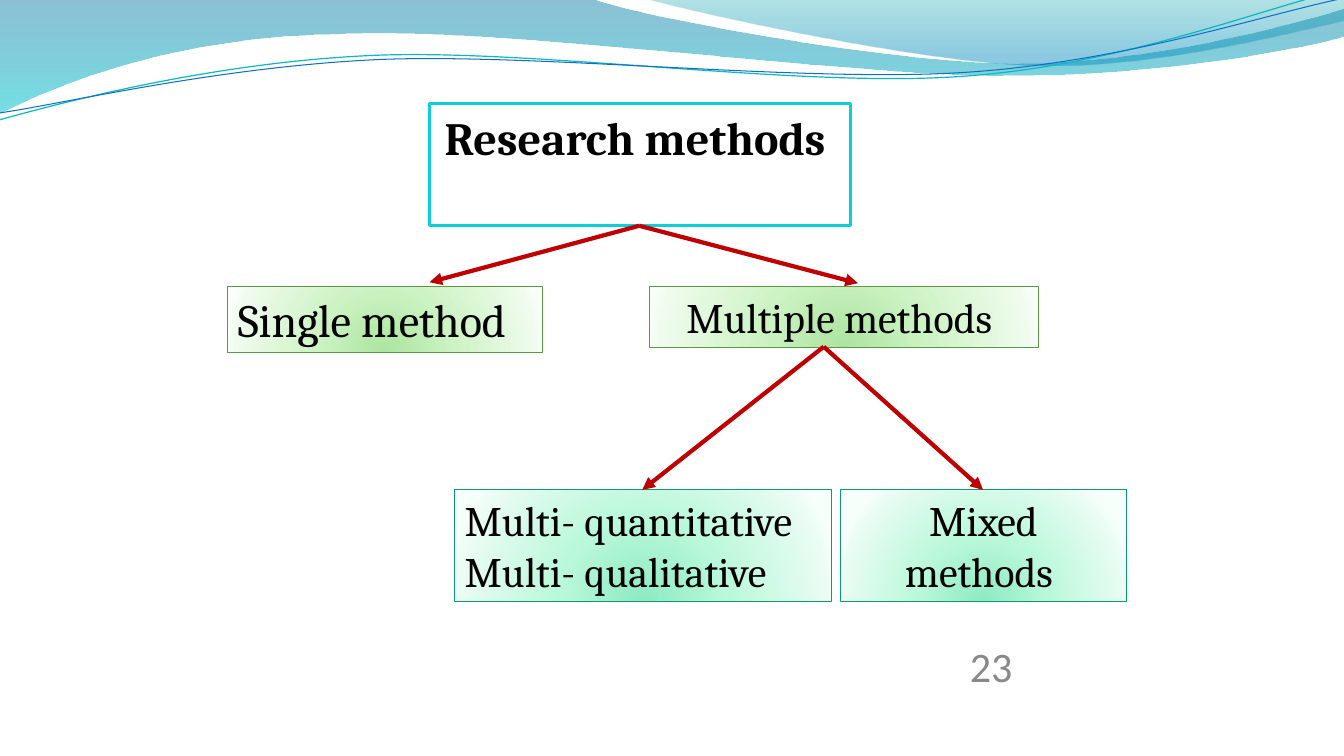
from itertools import chain

from lxml import etree
from pptx import Presentation
from pptx.dml.color import RGBColor
from pptx.enum.shapes import MSO_CONNECTOR, MSO_SHAPE
from pptx.enum.text import MSO_ANCHOR, MSO_AUTO_SIZE, PP_ALIGN
from pptx.oxml import parse_xml
from pptx.oxml.ns import nsdecls, qn
from pptx.util import Inches, Pt

RECTANGLE, STRAIGHT = MSO_SHAPE.RECTANGLE, MSO_CONNECTOR.STRAIGHT
TOP, BOTTOM = MSO_ANCHOR.TOP, MSO_ANCHOR.BOTTOM
LEFT, CENTER = PP_ALIGN.LEFT, PP_ALIGN.CENTER
NO_FIT, GROW = MSO_AUTO_SIZE.NONE, MSO_AUTO_SIZE.SHAPE_TO_FIT_TEXT

BLACK = RGBColor(0x00, 0x00, 0x00)
WHITE = RGBColor(0xFF, 0xFF, 0xFF)
GRAY = RGBColor(0x89, 0x89, 0x89)
CYAN = RGBColor(0x0B, 0xD0, 0xD9)
RED = RGBColor(0xC0, 0x00, 0x00)
GREEN_LINE = RGBColor(0x5B, 0x97, 0x47)
MINT_LINE = RGBColor(0x0A, 0x9B, 0x74)
TEAL_WAVE = RGBColor(0x0A, 0xB8, 0xBF)
BLUE_WAVE = RGBColor(0x0F, 0x6F, 0xC6)
DEEP_BLUE = RGBColor(0x00, 0x74, 0xA1)
AQUA = RGBColor(0x00, 0xC6, 0xCF)
DEEP_TEAL = RGBColor(0x00, 0xA1, 0xA9)
SKY_BLUE = RGBColor(0x00, 0x8B, 0xBF)
GREEN_GLOW = [RGBColor(0xAC, 0xE4, 0x9F), RGBColor(0xCD, 0xF3, 0xC4),
              RGBColor(0xEF, 0xFB, 0xED), RGBColor(0xF9, 0xFF, 0xF8)]
MINT_GLOW = [RGBColor(0x8D, 0xEA, 0xC2), RGBColor(0xBA, 0xF8, 0xDB),
             RGBColor(0xEA, 0xFC, 0xF3), RGBColor(0xF7, 0xFF, 0xFB)]
GLOW_POSITIONS = [0, 43, 93, 100]
DOWNWARD = '<a:lin ang="5400000" scaled="0"/>'
RADIAL = ('<a:path path="circle"><a:fillToRect l="50000" t="130000" '
          'r="50000" b="-30000"/></a:path>')

WAVE_BANDS = [
    ([(0, 0), [(5.87, -0.01)],
      [(6.34, 0.17), (8.85, 0.63), (10.11, 0.63)],
      [(11.38, 0.63), (12.78, 0.26), (13.33, 0.09)],
      [(13.35, 0.36)],
      [(13.11, 0.44), (11.6, 0.76), (9.94, 0.75)],
      [(8.29, 0.75), (5.09, 0.28), (3.43, 0.34)],
      [(1.72, 0.36), (0.61, 0.83), (-0.01, 1.13)]],
     [(0, DEEP_BLUE, 45), (100, AQUA, 55)]),
    ([(6.39, -0.01),
      [(6.79, 0.11), (9.09, 0.62), (10.25, 0.65)],
      [(11.41, 0.69), (12.82, 0.32), (13.33, 0.21)],
      [(13.33, 0)]],
     [(0, DEEP_TEAL, 30), (80, SKY_BLUE, 45)]),
]
WAVE_LINES = [
    ([(-0.01, 1.19),
      [(0.64, 1.01), (2.11, 0.62), (3.69, 0.55)],
      [(5.27, 0.48), (7.9, 0.87), (9.5, 0.76)],
      [(11.1, 0.66), (12.52, 0.08), (13.31, -0.1)]], TEAL_WAVE, 0.85),
    ([(0, 1.12),
      [(0.63, 1.03), (2.18, 0.66), (3.78, 0.59)],
      [(5.37, 0.53), (7.96, 0.82), (9.55, 0.72)],
      [(11.15, 0.62), (12.55, 0.14), (13.34, -0.02)]], BLUE_WAVE, 0.75),
]
METHODS = [
    ((2.26, 2.84, 3.12, 0.66), ["Single method"], 33, LEFT, GREEN_GLOW, GREEN_LINE),
    ((6.44, 2.84, 3.86, 0.61), ["Multiple methods "], 30, CENTER, GREEN_GLOW, GREEN_LINE),
    ((4.51, 4.86, 3.74, 1.11), ["Multi- quantitative", "Multi- qualitative"],
     30, LEFT, MINT_GLOW, MINT_LINE),
    ((8.34, 4.86, 2.83, 1.11), ["Mixed methods "], 30, CENTER, MINT_GLOW, MINT_LINE),
]
BRANCHES = [
    ((6.34, 2.24), [(4.26, 2.8), (8.51, 2.81)]),
    ((8.17, 3.44), [(6.37, 4.86), (9.75, 4.86)]),
]


def set_gradient(shape, stops, direction):
    """Fill a shape with (position, colour, opacity) stops."""
    stop_xml = "".join(
        f'<a:gs pos="{position * 1000}"><a:srgbClr val="{colour}">'
        + (f'<a:alpha val="{opacity * 1000}"/>' if opacity < 100 else "")
        + '</a:srgbClr></a:gs>'
        for position, colour, opacity in stops)
    gradient = parse_xml(f'<a:gradFill {nsdecls("a")} rotWithShape="1">'
                         f'<a:gsLst>{stop_xml}</a:gsLst>{direction}</a:gradFill>')
    shape.fill.background()
    properties = shape.fill._xPr
    properties.replace(properties.find(qn("a:noFill")), gradient)


def add_wave(slide, outline, close):
    """Draw one outline of straight and Bézier segments, without a shadow."""
    start, *segments = outline
    points = [(Inches(x), Inches(y)) for x, y in chain(*segments)]
    builder = slide.shapes.build_freeform(Inches(start[0]), Inches(start[1]))
    builder.add_line_segments(points, close=close)
    wave = builder.convert_to_shape()
    wave.shadow.inherit = False
    steps = iter(list(wave._element.iter(qn("a:lnTo"))))
    for segment in segments:
        first, *rest = [next(steps) for _ in segment]
        if rest:
            first.tag = qn("a:cubicBezTo")
            for step in rest:
                first.append(step[0])
                step.getparent().remove(step)
    return wave


def add_waves(slide):
    """Draw the bands and lines across the top of the slide."""
    for outline, stops in WAVE_BANDS:
        band = add_wave(slide, outline, True)
        set_gradient(band, stops, DOWNWARD)
        band.line.fill.background()
    for outline, colour, width in WAVE_LINES:
        ripple = add_wave(slide, outline, False)
        ripple.fill.background()
        ripple.line.color.rgb = colour
        ripple.line.width = Pt(width)


def write(shape, lines, size, align, colour=BLACK, font="Cambria", bold=False,
          anchor=TOP, fit=NO_FIT):
    """Write one paragraph per line in a shape."""
    frame = shape.text_frame
    frame.text = "\n".join(lines)
    frame.word_wrap = len(lines) == 1
    frame.auto_size = fit
    frame.vertical_anchor = anchor
    for paragraph in frame.paragraphs:
        paragraph.alignment = align
        paragraph.font.name = font
        paragraph.font.size = Pt(size)
        paragraph.font.bold = bold
        paragraph.font.color.rgb = colour


def place_title(slide, box):
    """Place the framed title at the root of the tree."""
    title = slide.shapes.title
    title.left, title.top, title.width, title.height = map(Inches, box)
    title.fill.solid()
    title.fill.fore_color.rgb = WHITE
    title.line.color.rgb = CYAN
    title.line.width = Pt(2)
    write(title, ["Research methods "], 33, CENTER, bold=True)


def add_method(slide, box, lines, size, align, glow, outline):
    """Draw one glowing method box."""
    method = slide.shapes.add_shape(RECTANGLE, *map(Inches, box))
    method.shadow.inherit = False
    set_gradient(method, [(position, colour, 100)
                          for position, colour in zip(GLOW_POSITIONS, glow)], RADIAL)
    method.line.color.rgb = outline
    method.line.width = Pt(0.75)
    write(method, lines, size, align, fit=GROW)


def add_arrow(slide, start, end):
    """Draw one red arrow between two points."""
    arrow = slide.shapes.add_connector(STRAIGHT, *map(Inches, (*start, *end)))
    arrow.line.color.rgb = RED
    arrow.line.width = Pt(3)
    etree.SubElement(arrow.line._get_or_add_ln(), qn("a:tailEnd"), type="triangle")
    etree.SubElement(arrow._element.spPr, qn("a:effectLst"))


def add_page_number(slide, box):
    """Write the page number at the bottom of its box."""
    number = slide.shapes.add_textbox(*map(Inches, box))
    frame = number.text_frame
    frame.margin_left = frame.margin_right = frame.margin_top = frame.margin_bottom = 0
    write(number, ["23"], 30, LEFT, GRAY, "Calibri", anchor=BOTTOM)


def main():
    """Build and save the research methods slide."""
    presentation = Presentation()
    presentation.slide_width = Inches(13.33)
    presentation.slide_height = Inches(7.5)
    slide = presentation.slides.add_slide(presentation.slide_layouts[5])
    add_waves(slide)
    place_title(slide, (4.26, 1.03, 4.18, 1.21))
    for method in METHODS:
        add_method(slide, *method)
    for start, ends in BRANCHES:
        for end in ends:
            add_arrow(slide, start, end)
    add_page_number(slide, (9.62, 6.55, 0.95, 0.3))
    presentation.save("out.pptx")


if __name__ == "__main__":
    main()
